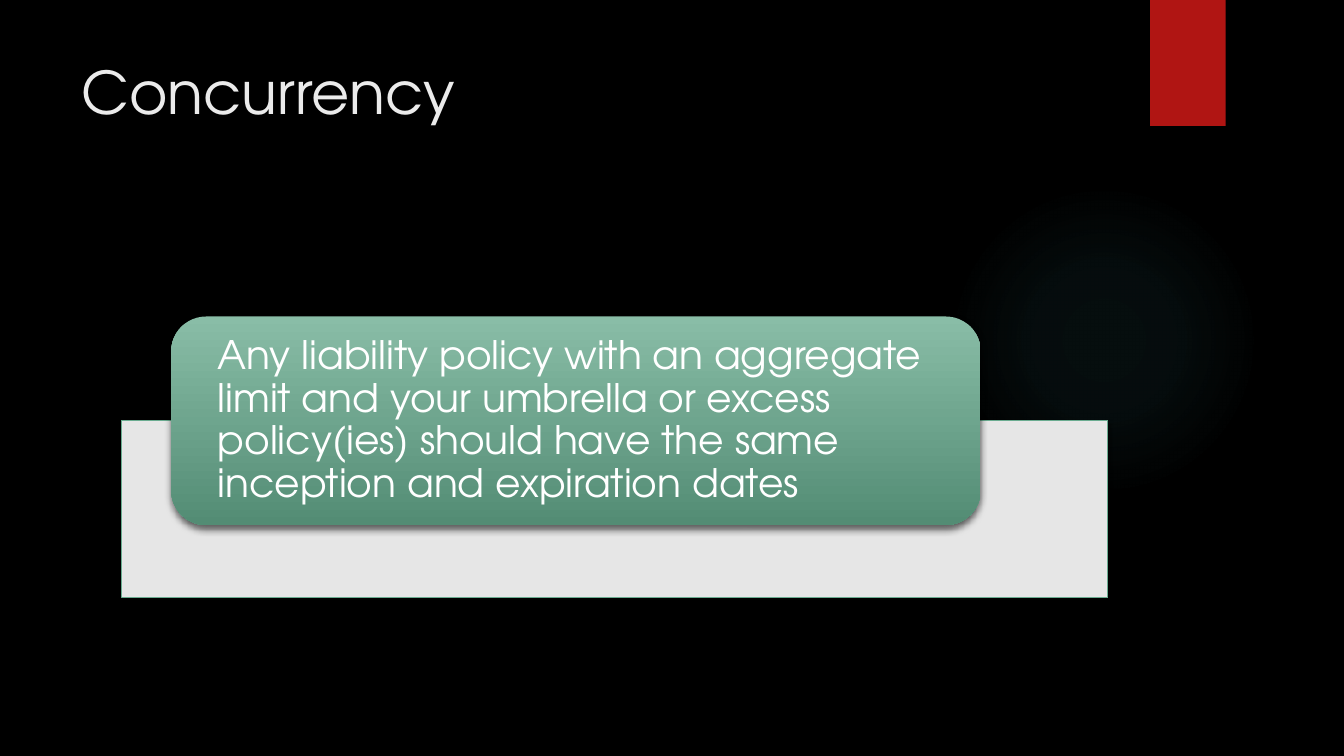
import pptx
import pptx.util
import pptx.oxml
import pptx.oxml.ns
import pptx.dml.color
import pptx.enum.shapes
import pptx.enum.text

Pt = pptx.util.Pt
RGB = pptx.dml.color.RGBColor.from_string
SHAPE = pptx.enum.shapes.MSO_SHAPE
ANCHOR = pptx.enum.text.MSO_ANCHOR
ALIGN = pptx.enum.text.PP_ALIGN
qn = pptx.oxml.ns.qn
NS = pptx.oxml.ns.nsdecls("a")

FONT = "TeX Gyre Adventor"
COLORS = {
    "background": "000000",
    "glow": "50B9C1",
    "ribbon": "B01513",
    "title": "EBEBEB",
    "panel": "FFFFFF",
    "panel_line": "6AAC90",
    "card_top": "89BDA7",
    "card_bottom": "538C74",
    "card_text": "FFFFFF",
    "shadow": "000000",
}


def color_xml(name, alpha):
    return (f'<a:srgbClr val="{COLORS[name]}">'
            f'<a:alpha val="{alpha * 1000}"/></a:srgbClr>')


def add_box(s, kind, box, fill=None):
    sp = s.shapes.add_shape(kind, *(Pt(v) for v in box))
    sp.shadow.inherit = False
    sp.line.fill.background()
    if fill:
        sp.fill.solid()
        sp.fill.fore_color.rgb = RGB(COLORS[fill])
    else:
        sp.fill.background()
    return sp


def set_gradient(sp, stops, direction):
    """Fill with (position %, colour name, opacity %) stops."""
    gs = "".join(f'<a:gs pos="{pos * 1000}">{color_xml(name, alpha)}</a:gs>'
                 for pos, name, alpha in stops)
    grad = pptx.oxml.parse_xml(
        f'<a:gradFill {NS} rotWithShape="1"><a:gsLst>{gs}</a:gsLst>'
        f'{direction}</a:gradFill>')
    spPr = sp._element.spPr
    spPr.replace(spPr.find(qn("a:noFill")), grad)


def add_shadow(sp, alpha, blur, dist):
    sp._element.spPr.find(qn("a:effectLst")).append(pptx.oxml.parse_xml(
        f'<a:outerShdw {NS} blurRad="{Pt(blur)}" dist="{Pt(dist)}" '
        f'dir="5400000" rotWithShape="0">{color_xml("shadow", alpha)}'
        '</a:outerShdw>'))


def format_text(p, size, color):
    p.alignment = ALIGN.LEFT
    font = p.runs[0].font
    font.name = FONT
    font.size = Pt(size)
    font.color.rgb = RGB(COLORS[color])


def add_backdrop(s, left, top, width, height):
    s.background.fill.solid()
    s.background.fill.fore_color.rgb = RGB(COLORS["background"])

    # Soft round glow
    glow = add_box(s, SHAPE.OVAL, (left + 677.5, top + 131.8, 221.8, 221.8))
    set_gradient(
        glow, [(0, "glow", 7), (36, "glow", 6), (69, "glow", 0)],
        '<a:path path="circle"><a:fillToRect l="50000" t="50000" '
        'r="50000" b="50000"/></a:path>')

    # Ribbon hanging from the top edge
    ribbon = add_box(s, SHAPE.RECTANGLE,
                     (left + width - 138.5, top, 54, 90), "ribbon")
    add_shadow(ribbon, 45, 3, 2)


def add_title(s, text, left, top, width, height):
    sp = s.shapes.title
    sp.left, sp.top, sp.width, sp.height = map(Pt, (left, top, width, height))
    tf = sp.text_frame
    tf.text = text
    tf.word_wrap = True
    tf.vertical_anchor = ANCHOR.TOP
    format_text(tf.paragraphs[0], 42, "title")


def add_statement(s, text, left, top, width, height):
    # Pale panel in the lower part
    panel_top = 74.1
    panel = add_box(s, SHAPE.RECTANGLE,
                    (left, top + panel_top, width, height - panel_top), "panel")
    color = panel._element.spPr.find(qn("a:solidFill"))[0]
    color.append(pptx.oxml.parse_xml(f'<a:alpha {NS} val="90000"/>'))
    panel.line.color.rgb = RGB(COLORS["panel_line"])
    panel.line.width = Pt(0.75)
    add_shadow(panel, 45, 3, 2)

    # Rounded card overlapping the panel
    card = add_box(s, SHAPE.ROUNDED_RECTANGLE,
                   (left + width * 0.05, top, 578.2, 149))
    set_gradient(card, [(0, "card_top", 100), (100, "card_bottom", 100)],
                 '<a:lin ang="5400000" scaled="0"/>')
    add_shadow(card, 60, 5, 3)
    tf = card.text_frame
    tf.word_wrap = True
    tf.vertical_anchor = ANCHOR.MIDDLE
    tf.margin_left = tf.margin_right = Pt(26)
    tf.margin_top = tf.margin_bottom = 0
    tf.text = text
    p = tf.paragraphs[0]
    p.line_spacing = 0.9
    format_text(p, 28, "card_text")


def main():
    prs = pptx.Presentation()
    prs.slide_width, prs.slide_height = Pt(960), Pt(540)
    s = prs.slides.add_slide(prs.slide_layouts[5])
    add_backdrop(s, 0, 0, 960, 540)
    add_title(s, "Concurrency", 51.1, 36, 740.9, 110.2)
    add_statement(
        s, "Any liability policy with an aggregate limit and your umbrella or "
        "excess policy(ies) should have the same inception and expiration dates",
        87.1, 226.1, 704.2, 200.9)
    prs.save("out.pptx")


if __name__ == "__main__":
    main()
